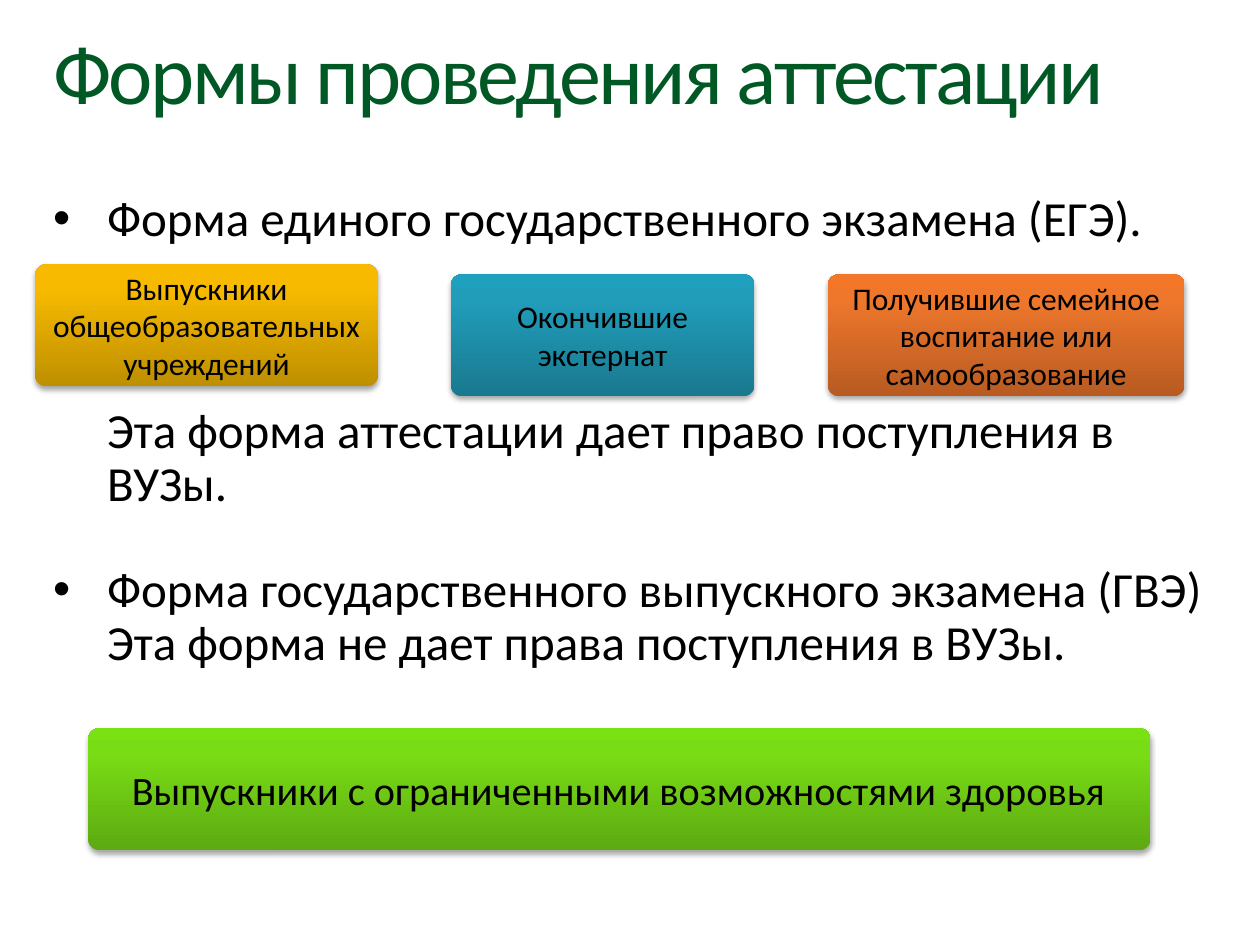
from dataclasses import dataclass

from pptx import Presentation
from pptx.dml.color import RGBColor
from pptx.enum.shapes import MSO_SHAPE
from pptx.enum.text import MSO_ANCHOR, PP_ALIGN
from pptx.oxml import parse_xml
from pptx.oxml.ns import nsdecls
from pptx.util import Cm, Pt


@dataclass(frozen=True)
class Theme:
    face: str = "Calibri"
    ink: str = "000000"
    green: str = "005825"
    gold: tuple = ("BE8F00", "F7BA00", "F8BB00")
    teal: tuple = ("19798F", "219DBA", "1EA0BE")
    rust: tuple = ("B85B22", "EE772C", "F37629")
    lime: tuple = ("5DAA11", "79DD16", "7AE212")
    head: int = 48
    body: int = 28
    wide: int = 23
    card: int = 18


THEME = Theme()
STOPS = (0, 80000, 100000)
CARD_H = 2.46


def style(para, size, color):
    font = para.font
    font.name = THEME.face
    font.size = Pt(size)
    font.color.rgb = RGBColor.from_string(color)


def add_text(slide, left, top, width, height):
    frame = slide.shapes.add_textbox(Cm(left), Cm(top), Cm(width), Cm(height)).text_frame
    frame.word_wrap = True
    frame.margin_left = frame.margin_right = 0
    frame.margin_top = frame.margin_bottom = 0
    return frame


def add_title(slide, left, top, width, height):
    para = add_text(slide, left, top, width, height).paragraphs[0]
    run = para.add_run()
    run.text = "Формы проведения аттестации"
    run.font._element.set("spc", "-150")
    para.line_spacing = 0.9
    style(para, THEME.head, THEME.green)


def add_body(slide, left, top, width, height):
    items = (
        ("Форма единого государственного экзамена (ЕГЭ).", True, 0),
        ("Эта форма аттестации дает право поступления в ВУЗы.", False, 91),
        ("Форма государственного выпускного экзамена (ГВЭ) "
         "Эта форма не дает права поступления в ВУЗы.", True, 30.5),
    )
    frame = add_text(slide, left, top, width, height)
    indent = Cm(1.09)
    for i, (text, dot, gap) in enumerate(items):
        para = frame.add_paragraph() if i else frame.paragraphs[0]
        para.text = text
        para.line_spacing = 0.9
        para.space_before = Pt(gap)
        props = para._p.get_or_add_pPr()
        props.set("marL", str(indent))
        props.set("indent", str(-indent if dot else 0))
        if dot:
            props.append(parse_xml(f'<a:buFont {nsdecls("a")} typeface="Arial"/>'))
            props.append(parse_xml(f'<a:buChar {nsdecls("a")} char="•"/>'))
        style(para, THEME.body, THEME.ink)


def add_card(slide, left, top, width, height, text, shades, size):
    card = slide.shapes.add_shape(
        MSO_SHAPE.ROUNDED_RECTANGLE, Cm(left), Cm(top), Cm(width), Cm(height))
    card.adjustments[0] = 0.09
    card.fill.gradient()
    card.fill.gradient_angle = 90
    card.line.fill.background()
    card.shadow.inherit = False
    props = card._element.spPr
    stops = props.find(".//{*}gsLst")
    stops.clear()
    for pos, shade in zip(STOPS, shades):
        stops.append(parse_xml(
            f'<a:gs {nsdecls("a")} pos="{pos}"><a:srgbClr val="{shade}"/></a:gs>'))
    props.find("{*}effectLst").append(parse_xml(
        f'<a:outerShdw {nsdecls("a")} blurRad="40000" dist="23000" dir="5400000" '
        f'rotWithShape="0"><a:srgbClr val="{THEME.ink}"><a:alpha val="35000"/>'
        '</a:srgbClr></a:outerShdw>'))
    frame = card.text_frame
    frame.word_wrap = True
    frame.vertical_anchor = MSO_ANCHOR.MIDDLE
    para = frame.paragraphs[0]
    para.text = text
    para.alignment = PP_ALIGN.CENTER
    style(para, size, THEME.ink)


def add_row(slide, left, top):
    cards = (
        (15.98, 0.2, 7.19, "Получившие семейное воспитание или самообразование", THEME.rust),
        (8.38, 0.2, 6.12, "Окончившие экстернат", THEME.teal),
        (0, 0, 6.91, "Выпускники общеобразовательных учреждений", THEME.gold),
    )
    for x, y, width, text, shades in cards:
        add_card(slide, left + x, top + y, width, CARD_H, text, shades, THEME.card)


def main():
    deck = Presentation()
    deck.slide_width, deck.slide_height = Cm(25.4), Cm(19.05)
    slide = deck.slides.add_slide(deck.slide_layouts[6])
    add_title(slide, 1.07, 0.64, 23.29, 1.85)
    add_body(slide, 1.07, 3.91, 23.29, 9.7)
    add_row(slide, 0.71, 5.33)
    add_card(slide, 1.78, 14.68, 21.41, CARD_H,
             "Выпускники с ограниченными возможностями здоровья", THEME.lime, THEME.wide)
    deck.save("out.pptx")


if __name__ == "__main__":
    main()
